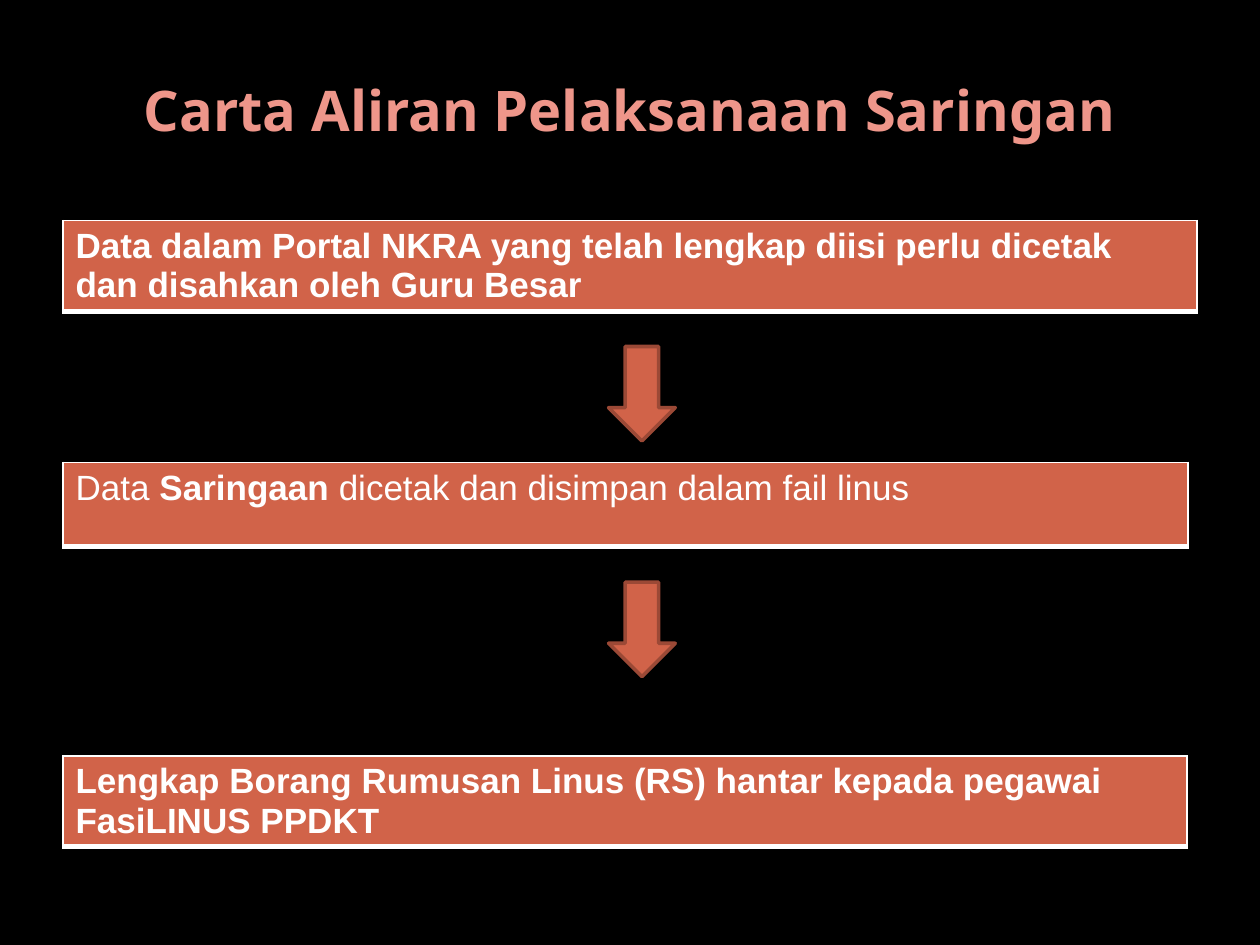
"""Build the slide showing the screening flow chart as three boxes and two arrows."""
import pptx
import pptx.dml.color
import pptx.enum.shapes
import pptx.enum.text
import pptx.oxml
import pptx.oxml.ns
import pptx.util


def rgb(value):
    return pptx.dml.color.RGBColor.from_string(value)


def add_run(p, text, font, size, bold, color):
    r = p.add_run()
    r.text = text
    r.font.name = font
    r.font.size = pptx.util.Pt(size)
    r.font.bold = bold
    r.font.color.rgb = rgb(color)


prs = pptx.Presentation()
prs.slide_width = pptx.util.Inches(10)
prs.slide_height = pptx.util.Inches(7.5)
col = prs.slide_width // 20
inch = pptx.util.Inches(1)

s = prs.slides.add_slide(prs.slide_layouts[5])
s.background.fill.solid()
s.background.fill.fore_color.rgb = rgb("000000")

title = s.shapes.title
title.left, title.top = col, int(0.04 * prs.slide_height)
title.width, title.height = 18 * col, int(0.15 * prs.slide_height)
tf = title.text_frame
tf.vertical_anchor = pptx.enum.text.MSO_ANCHOR.MIDDLE
p = tf.paragraphs[0]
p.alignment = pptx.enum.text.PP_ALIGN.CENTER
add_run(p, "Carta Aliran Pelaksanaan Saringan", "Noto Sans", 32, True, "EE968A")

steps = [
    (1.75, 9, 0.72, [("Data dalam Portal NKRA yang telah lengkap diisi perlu dicetak "
                      "dan disahkan oleh Guru Besar", True)]),
    (3.67, 8.93, 0.67, [("Data ", False), ("Saringaan ", True),
                        ("dicetak dan disimpan dalam fail linus", False)]),
    (6, 8.92, 0.72, [("Lengkap Borang Rumusan Linus (RS) hantar kepada pegawai "
                      "FasiLINUS PPDKT", True)]),
]
borders = {"a:lnL": 1, "a:lnR": 1, "a:lnT": 1, "a:lnB": 3}

for top, width, height, runs in steps:
    frame = s.shapes.add_table(1, 1, col, int(top * inch), int(width * inch), int(height * inch))
    cell = frame.table.cell(0, 0)
    for text, bold in runs:
        add_run(cell.text_frame.paragraphs[0], text, "Arial", 20, bold, "FFFFFF")
    tcPr = cell._tc.get_or_add_tcPr()
    for tag, weight in borders.items():
        tcPr.append(pptx.oxml.parse_xml(
            f'<{tag} {pptx.oxml.ns.nsdecls("a")} w="{pptx.util.Pt(weight)}"><a:solidFill>'
            f'<a:srgbClr val="FFFFFF"/></a:solidFill></{tag}>'))
    cell.fill.solid()
    cell.fill.fore_color.rgb = rgb("D16349")

for top in (2.75, 4.62):
    sp = s.shapes.add_shape(pptx.enum.shapes.MSO_SHAPE.DOWN_ARROW, int(4.83 * inch),
                            int(top * inch), int(0.53 * inch), int(0.75 * inch))
    sp.shadow.inherit = False
    sp.fill.solid()
    sp.fill.fore_color.rgb = rgb("D16349")
    sp.line.color.rgb = rgb("9B4936")
    sp.line.width = pptx.util.Pt(2)

prs.save("out.pptx")
